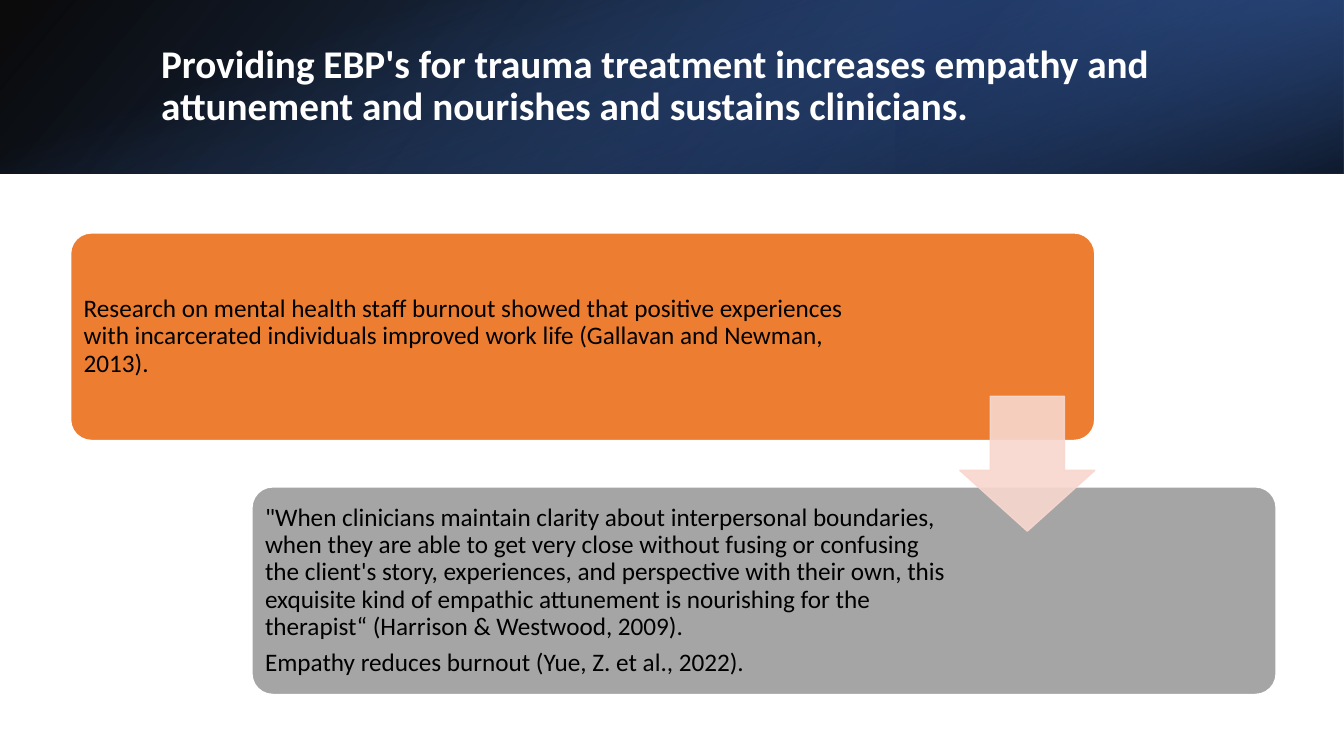
from lxml import etree
from pptx import Presentation
from pptx.dml.color import RGBColor
from pptx.enum import shapes, text
from pptx.oxml.ns import qn
from pptx.util import Cm, Pt

WHITE = RGBColor(0xFF, 0xFF, 0xFF)
BLACK = RGBColor(0x00, 0x00, 0x00)
ORANGE = RGBColor(0xED, 0x7D, 0x31)
GRAY = RGBColor(0xA5, 0xA5, 0xA5)
PINK = RGBColor(0xF8, 0xD7, 0xCE)
NAVY = RGBColor(0x20, 0x38, 0x64)
BLUE = RGBColor(0x44, 0x72, 0xC4)
DARK_BLUE = RGBColor(0x2F, 0x55, 0x97)

SLIDE_WIDTH, SLIDE_HEIGHT = 33.87, 19.05
BAND_HEIGHT = 4.37

TITLE = ("Providing EBP's for trauma treatment increases empathy and attunement "
         "and nourishes and sustains clinicians.")
RESEARCH = ["Research on mental health staff burnout showed that positive experiences with "
            "incarcerated individuals improved work life (Gallavan and Newman, 2013)."]
EMPATHY = ["\"When clinicians maintain clarity about interpersonal boundaries, when they are "
           "able to get very close without fusing or confusing the client's story, "
           "experiences, and perspective with their own, this exquisite kind of empathic "
           "attunement is nourishing for the therapist“ (Harrison & Westwood, 2009).",
           "Empathy reduces burnout (Yue, Z. et al., 2022)."]


def add_text(slide, box, paragraphs, size=18, color=BLACK, bold=False,
             inset=(0.18, 0.18), space_after=0):
    frame = slide.shapes.add_textbox(*map(Cm, box)).text_frame
    frame.word_wrap = True
    frame.vertical_anchor = text.MSO_ANCHOR.MIDDLE
    frame.margin_left = frame.margin_right = Cm(inset[0])
    frame.margin_top = frame.margin_bottom = Cm(inset[1])
    for index, content in enumerate(paragraphs):
        paragraph = frame.add_paragraph() if index else frame.paragraphs[0]
        paragraph.line_spacing = 0.9
        paragraph.space_after = Pt(space_after)
        run = paragraph.add_run()
        run.text = content
        run.font.name = "Calibri"
        run.font.size = Pt(size)
        run.font.bold = bold
        run.font.color.rgb = color


def add_alpha(color_element, opacity):
    etree.SubElement(color_element, qn("a:alpha"), val=str(opacity * 1000))


def add_solid_shape(slide, kind, box, fill, line, adjustments):
    shape = slide.shapes.add_shape(kind, *map(Cm, box))
    shape.shadow.inherit = False
    for index, value in enumerate(adjustments):
        shape.adjustments[index] = value
    shape.fill.solid()
    shape.fill.fore_color.rgb = fill
    shape.line.color.rgb = line
    shape.line.width = Pt(1)
    return shape


def add_gradient(slide, box, stops, angle, rotation=0, flip=False):
    shape = slide.shapes.add_shape(shapes.MSO_SHAPE.RECTANGLE, *map(Cm, box))
    shape.shadow.inherit = False
    shape.line.fill.background()
    shape.rotation = rotation
    properties = shape.element.spPr
    if flip:
        properties.find(qn("a:xfrm")).set("flipH", "1")
    gradient = etree.Element(qn("a:gradFill"), rotWithShape="1")
    stop_list = etree.SubElement(gradient, qn("a:gsLst"))
    for position, color, opacity in stops:
        stop = etree.SubElement(stop_list, qn("a:gs"), pos=str(position * 1000))
        add_alpha(etree.SubElement(stop, qn("a:srgbClr"), val=str(color)), opacity)
    etree.SubElement(gradient, qn("a:lin"), ang=str(angle * 60000), scaled="0")
    properties.find(qn("a:prstGeom")).addnext(gradient)


def add_header(slide, left, top, width, height):
    add_gradient(slide, (left, top, width, height),
                 [(0, BLACK, 96), (100, DARK_BLUE, 100)], 140, flip=True)
    add_gradient(slide, (left + width * 2 / 3, top, width / 3, height),
                 [(19, NAVY, 68), (100, BLUE, 79)], 320, rotation=180, flip=True)
    shift = (width - height) / 2
    add_gradient(slide, (left + shift, top - shift, height, width),
                 [(23, BLUE, 0), (99, BLACK, 74)], 340, rotation=90)
    add_text(slide, (left + 3.81, top + 0.97, 27.89, 2.44), [TITLE],
             size=28, color=WHITE, bold=True, inset=(0.25, 0.13))


def add_card(slide, left, top, width, height, fill, paragraphs, text_width):
    add_solid_shape(slide, shapes.MSO_SHAPE.ROUNDED_RECTANGLE,
                    (left, top, width, height), fill, WHITE, [0.1])
    add_text(slide, (left + 0.15, top + 0.15, text_width, height - 0.3),
             paragraphs, space_after=6.3)


def add_process(slide, left, top, width, height):
    card_width, card_height, arrow_size = 25.81, 5.23, 3.4
    second_top = top + height - card_height
    add_card(slide, left, top, card_width, card_height, ORANGE, RESEARCH, 20.4)
    add_card(slide, left + width - card_width, second_top, card_width, card_height,
             GRAY, EMPATHY, 17.53)
    arrow_top = (top + card_height + second_top - arrow_size) / 2
    arrow = add_solid_shape(slide, shapes.MSO_SHAPE.DOWN_ARROW,
                            (left + card_width - arrow_size, arrow_top,
                             arrow_size, arrow_size), PINK, PINK, [0.55, 0.45])
    for color_element in arrow.element.spPr.iter(qn("a:srgbClr")):
        add_alpha(color_element, 90)


def main():
    presentation = Presentation()
    presentation.slide_width = Cm(SLIDE_WIDTH)
    presentation.slide_height = Cm(SLIDE_HEIGHT)
    slide = presentation.slides.add_slide(presentation.slide_layouts[6])
    add_header(slide, 0, 0, SLIDE_WIDTH, BAND_HEIGHT)
    add_process(slide, 1.78, 5.87, 30.38, 11.63)
    presentation.save("out.pptx")


if __name__ == "__main__":
    main()
